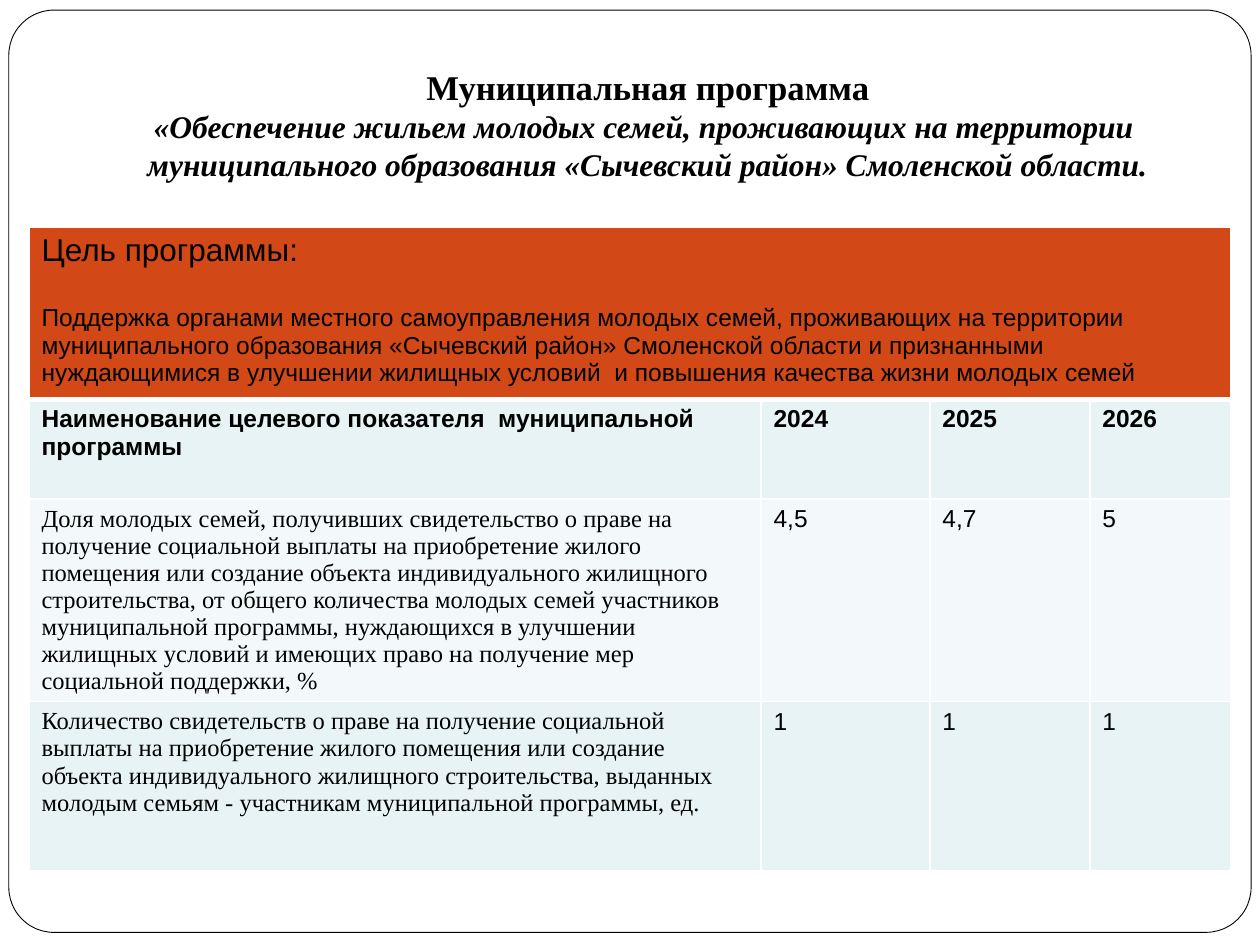
from dataclasses import dataclass

from lxml.etree import SubElement
from pptx import Presentation
from pptx.dml.color import RGBColor
from pptx.enum.shapes import MSO_SHAPE as Shape
from pptx.enum.text import MSO_ANCHOR as Anchor, MSO_AUTO_SIZE as AutoSize, PP_ALIGN as Align
from pptx.oxml.ns import qn
from pptx.util import Inches, Pt

BLACK = RGBColor(0x00, 0x00, 0x00)
WHITE = RGBColor(0xFF, 0xFF, 0xFF)
ORANGE = RGBColor(0xD3, 0x48, 0x17)
MINT = RGBColor(0xE7, 0xF3, 0xF4)
PALE = RGBColor(0xF3, 0xF9, 0xFA)
SANS = "Arial"
SERIF = "Times New Roman"
COLUMNS = [5.81, 1.34, 1.27, 1.12]


@dataclass
class Row:
    label: str
    values: list[str]
    height: float
    fill: RGBColor
    label_font: str = SERIF
    bold: bool = False


GOAL_HEIGHT = 1.37
GOAL_TITLE = "Цель программы:"
GOAL = (
    "Поддержка органами местного самоуправления молодых семей, проживающих на территории  "
    "муниципального образования «Сычевский район» Смоленской области и признанными "
    "нуждающимися в улучшении жилищных условий  и повышения качества жизни молодых семей"
)
ROWS = [
    Row("Наименование целевого показателя  муниципальной программы",
        ["2024", "2025", "2026"], 0.79, MINT, SANS, True),
    Row("Доля молодых семей, получивших свидетельство о праве на получение социальной "
        "выплаты на приобретение жилого помещения или создание объекта индивидуального "
        "жилищного строительства, от общего количества молодых семей участников "
        "муниципальной программы, нуждающихся в улучшении жилищных условий и имеющих "
        "право на получение мер социальной поддержки, %",
        ["4,5", "4,7", "5"], 1.61, PALE),
    Row("Количество свидетельств о праве на получение социальной выплаты на приобретение "
        "жилого помещения или создание объекта индивидуального жилищного строительства, "
        "выданных молодым семьям - участникам муниципальной программы, ед.",
        ["1", "1", "1"], 1.34, MINT),
]


def add_run(p, text: str, size: float, font: str, bold: bool = False, italic: bool = False) -> None:
    r = p.add_run()
    r.text = text
    r.font.size = Pt(size)
    r.font.name = font
    r.font.bold = bold
    r.font.italic = italic
    r.font.color.rgb = BLACK


def style_cell(cell, fill: RGBColor, top: float = 1, bottom: float = 1) -> None:
    tc_pr = cell._tc.get_or_add_tcPr()
    for side, width in (("L", 1), ("R", 1), ("T", top), ("B", bottom)):
        ln = SubElement(tc_pr, qn(f"a:ln{side}"), w=str(Pt(width)))
        SubElement(SubElement(ln, qn("a:solidFill")), qn("a:srgbClr"), val=str(WHITE))
    cell.fill.solid()
    cell.fill.fore_color.rgb = fill


def add_frame(s) -> None:
    sp = s.shapes.add_shape(Shape.ROUNDED_RECTANGLE, Inches(0.07), Inches(0.08),
                            Inches(9.86), Inches(7.32))
    sp.adjustments[0] = 0.049
    sp.shadow.inherit = False
    sp.fill.solid()
    sp.fill.fore_color.rgb = WHITE
    sp.line.color.rgb = BLACK
    sp.line.width = Pt(0.5)
    s.shapes._spTree.insert(2, sp._element)


def add_title(s) -> None:
    sp = s.shapes.title
    sp.left, sp.top, sp.width, sp.height = Inches(0.78), Inches(0.3), Inches(8.72), Inches(1.25)
    tf = sp.text_frame
    tf.auto_size = AutoSize.NONE
    tf.word_wrap = True
    tf.vertical_anchor = Anchor.BOTTOM
    tf.margin_left = tf.margin_right = tf.margin_bottom = Inches(0.1)
    tf.margin_top = Inches(0.05)
    p = tf.paragraphs[0]
    p.alignment = Align.CENTER
    add_run(p, "Муниципальная программа", 19.8, SERIF, bold=True)
    p.add_line_break()
    add_run(p, "«Обеспечение жильем молодых семей, проживающих на территории  "
               "муниципального образования «Сычевский район» Смоленской области.",
            18, SERIF, bold=True, italic=True)


def add_indicators(s) -> None:
    heights = [GOAL_HEIGHT] + [row.height for row in ROWS]
    table = s.shapes.add_table(len(heights), len(COLUMNS), Inches(0.23), Inches(1.8),
                               Inches(sum(COLUMNS)), Inches(sum(heights))).table
    table.first_row = table.horz_banding = False
    for column, width in zip(table.columns, COLUMNS):
        column.width = Inches(width)
    for table_row, height in zip(table.rows, heights):
        table_row.height = Inches(height)

    goal = table.cell(0, 0)
    goal.merge(table.cell(0, len(COLUMNS) - 1))
    for cell in table.rows[0].cells:
        style_cell(cell, ORANGE, bottom=3)
    add_run(goal.text_frame.paragraphs[0], GOAL_TITLE, 18, SANS)
    p = goal.text_frame.add_paragraph()
    p.space_before = Pt(20.7)
    add_run(p, GOAL, 14, SANS)

    for i, row in enumerate(ROWS, 1):
        for j, text in enumerate([row.label, *row.values]):
            cell = table.cell(i, j)
            style_cell(cell, row.fill, top=3 if i == 1 else 1)
            font = SANS if j else row.label_font
            add_run(cell.text_frame.paragraphs[0], text, 14, font, row.bold)


def main() -> None:
    prs = Presentation()
    prs.slide_width, prs.slide_height = Inches(10), Inches(7.5)
    s = prs.slides.add_slide(prs.slide_layouts[5])
    add_frame(s)
    add_title(s)
    add_indicators(s)
    prs.save("out.pptx")


if __name__ == "__main__":
    main()
